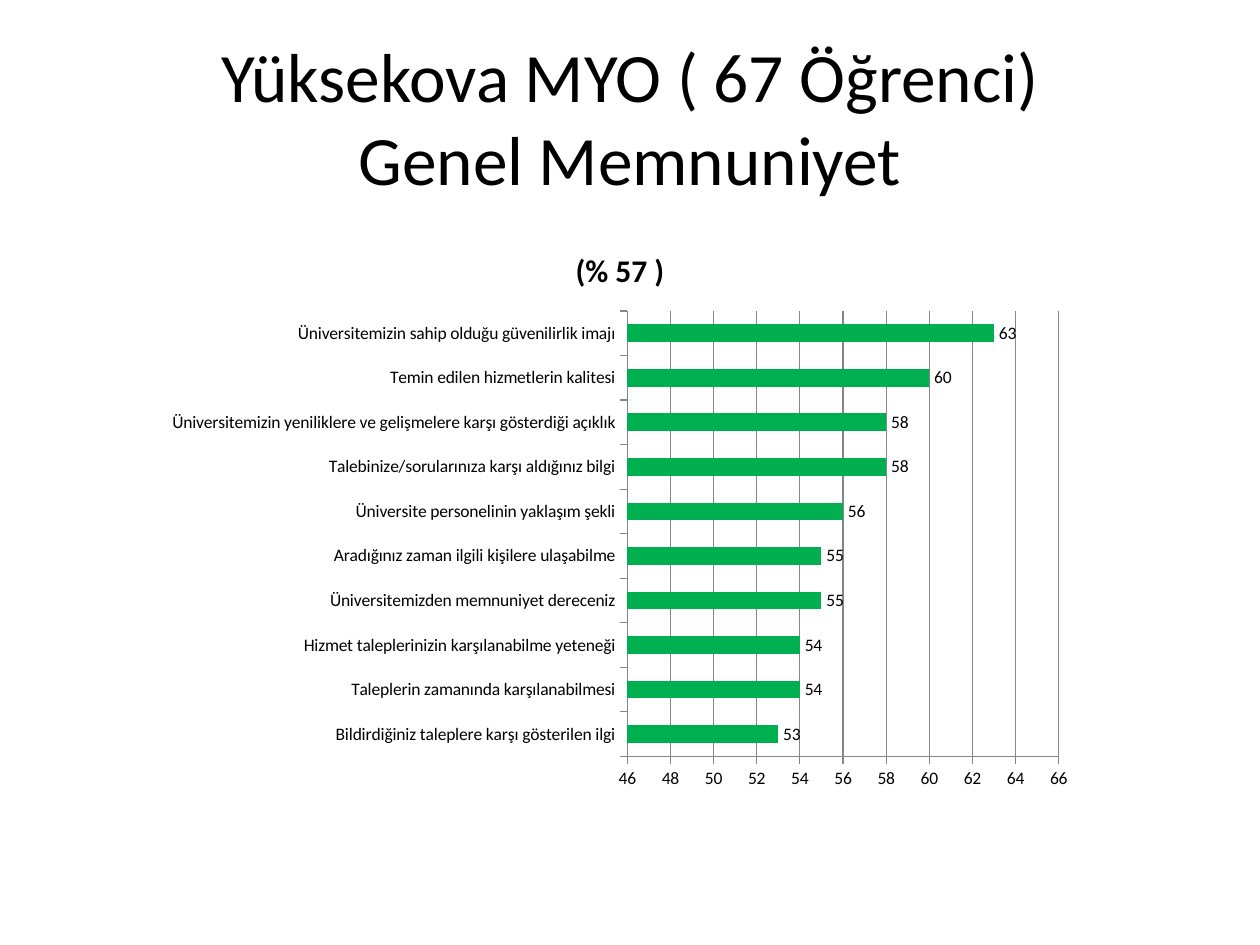
from pptx import Presentation
from pptx.chart.data import CategoryChartData
from pptx.dml.color import RGBColor
from pptx.enum.chart import XL_CHART_TYPE, XL_LABEL_POSITION, XL_TICK_MARK
from pptx.enum.text import MSO_ANCHOR, PP_ALIGN
from pptx.util import Inches, Pt

BAR_CLUSTERED = XL_CHART_TYPE.BAR_CLUSTERED
OUTSIDE_END = XL_LABEL_POSITION.OUTSIDE_END
TICK_OUTSIDE = XL_TICK_MARK.OUTSIDE
TICK_NONE = XL_TICK_MARK.NONE
MIDDLE = MSO_ANCHOR.MIDDLE
CENTER = PP_ALIGN.CENTER

COLORS = {"text": "000000", "bar": "00B050", "grid": "868686"}

SATISFACTION = [
    ("Bildirdiğiniz taleplere karşı gösterilen ilgi", 53),
    ("Taleplerin zamanında karşılanabilmesi", 54),
    ("Hizmet taleplerinizin karşılanabilme yeteneği", 54),
    ("Üniversitemizden memnuniyet dereceniz", 55),
    ("Aradığınız zaman ilgili kişilere ulaşabilme", 55),
    ("Üniversite personelinin yaklaşım şekli", 56),
    ("Talebinize/sorularınıza karşı aldığınız bilgi", 58),
    ("Üniversitemizin yeniliklere ve gelişmelere karşı gösterdiği açıklık", 58),
    ("Temin edilen hizmetlerin kalitesi", 60),
    ("Üniversitemizin sahip olduğu güvenilirlik imajı", 63),
]


def color(name):
    return RGBColor.from_string(COLORS[name])


def style_font(font, size, bold=False):
    font.name = "Calibri"
    font.size = Pt(size)
    font.bold = bold
    font.color.rgb = color("text")


def write_text(frame, text, *, size, bold=False, align=CENTER):
    """Fill a text frame; a vertical tab in the text is a line break."""
    frame.text = text
    paragraph = frame.paragraphs[0]
    paragraph.alignment = align
    for run in paragraph.runs:
        style_font(run.font, size, bold)


class SlideBuilder:
    """Holds the current slide and the style shared by its elements."""

    title_size = 39.6
    chart_title_size = 18
    chart_text_size = 10

    def __init__(self, slide):
        self.slide = slide

    def heading(self, text, left, top, width, height):
        box = self.slide.shapes.add_textbox(
            Inches(left), Inches(top), Inches(width), Inches(height))
        frame = box.text_frame
        frame.word_wrap = True
        frame.vertical_anchor = MIDDLE
        write_text(frame, text, size=self.title_size)

    def bar_chart(self, title, rows, left, top, width, height):
        data = CategoryChartData(number_format="0")
        data.categories = [question for question, _ in rows]
        data.add_series("Series 1", [score for _, score in rows])
        chart = self.slide.shapes.add_chart(
            BAR_CLUSTERED, Inches(left), Inches(top),
            Inches(width), Inches(height), data).chart
        style_font(chart.font, self.chart_text_size)
        chart.has_legend = False
        chart.has_title = True
        write_text(chart.chart_title.text_frame, title,
                   size=self.chart_title_size, bold=True)
        chart.chart_title.include_in_layout = False
        self.style_bars(chart.plots[0])
        self.style_axes(chart.category_axis, chart.value_axis)

    def style_bars(self, plot):
        plot.gap_width = 150
        plot.vary_by_categories = False
        fill = plot.series[0].format.fill
        fill.solid()
        fill.fore_color.rgb = color("bar")
        plot.has_data_labels = True
        labels = plot.data_labels
        labels.show_value = True
        labels.number_format = "0"
        labels.number_format_is_linked = False
        labels.position = OUTSIDE_END
        style_font(labels.font, self.chart_text_size)

    def style_axes(self, question_axis, score_axis):
        score_axis.minimum_scale = 46
        score_axis.maximum_scale = 66
        score_axis.major_unit = 2
        score_axis.has_major_gridlines = True
        score_axis.tick_labels.number_format = "0"
        score_axis.tick_labels.number_format_is_linked = False
        question_axis.has_major_gridlines = False
        lines = [score_axis.major_gridlines.format.line]
        for axis in (question_axis, score_axis):
            axis.major_tick_mark = TICK_OUTSIDE
            axis.minor_tick_mark = TICK_NONE
            style_font(axis.tick_labels.font, self.chart_text_size)
            lines.append(axis.format.line)
        for line in lines:
            line.color.rgb = color("grid")
            line.width = Pt(0.75)


def main():
    presentation = Presentation()
    presentation.slide_width = Inches(10)
    presentation.slide_height = Inches(7.5)
    blank_layout = presentation.slide_layouts[6]
    builder = SlideBuilder(presentation.slides.add_slide(blank_layout))
    builder.heading("Yüksekova MYO ( 67 Öğrenci)\vGenel Memnuniyet",
                    0.5, 0.3, 9, 1.25)
    builder.bar_chart("(% 57 )", SATISFACTION, 1.22, 1.78, 7.4, 4.57)
    presentation.save("out.pptx")


if __name__ == "__main__":
    main()
